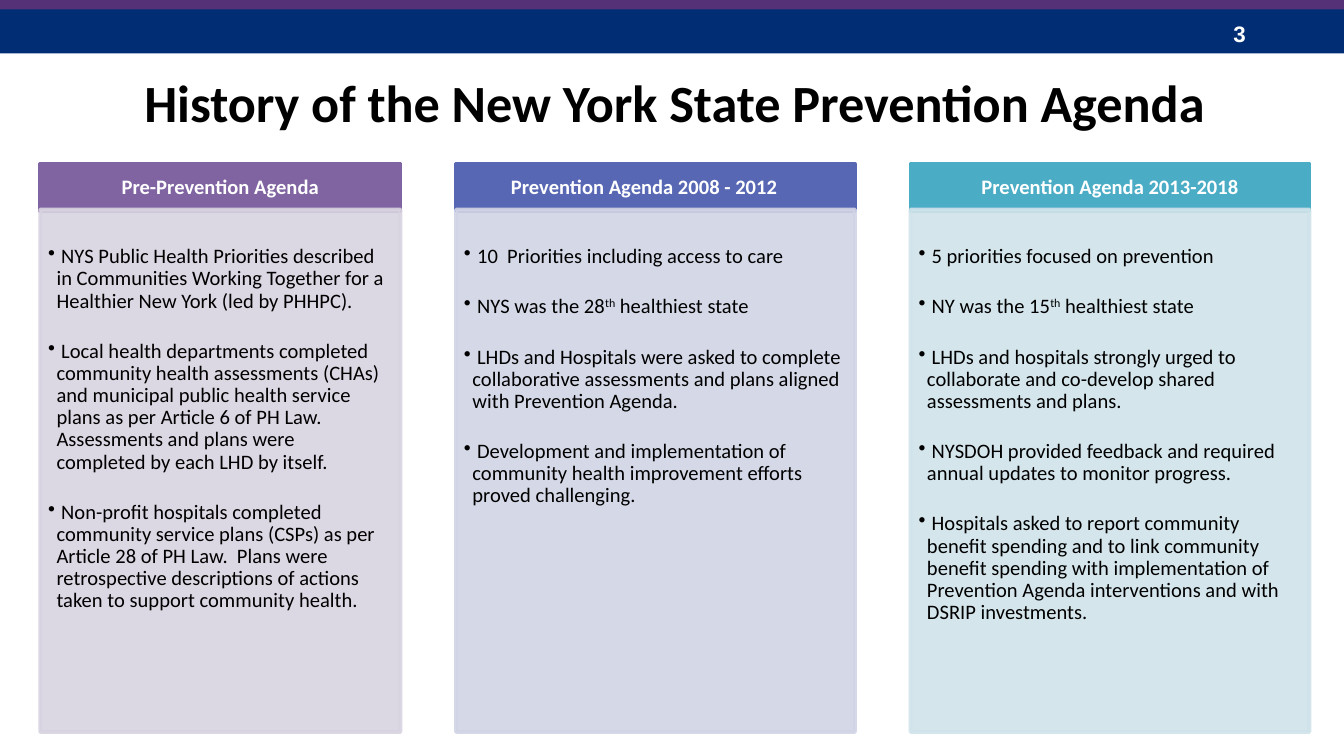
from dataclasses import dataclass

from lxml.etree import SubElement
from pptx import Presentation
from pptx.dml.color import RGBColor as Rgb
from pptx.enum.shapes import MSO_SHAPE as Shape
from pptx.enum.text import MSO_ANCHOR as Anchor, PP_ALIGN as Align
from pptx.oxml.ns import qn
from pptx.util import Cm, Pt


@dataclass(frozen=True)
class Theme:
    band: str = "002D73"
    stripe: str = "553278"
    dark: str = "000000"
    light: str = "FFFFFF"
    font: str = "Calibri"
    number_font: str = "Arial"
    title_size: int = 28
    number_size: int = 12
    text_size: int = 11


THEME = Theme()
TITLE = "History of the New York State Prevention Agenda"
PAGE_NUMBER = "3"

# A tuple holds plain text, superscript, plain text.
ERAS = [
    dict(
        heading="Pre-Prevention Agenda", width=6.81, heading_right=0.23,
        strong="8064A2", pale="D8D3E0",
        points=[
            "NYS Public Health Priorities described in Communities Working Together "
            "for a Healthier New York (led by PHHPC).",
            "Local health departments completed community health assessments (CHAs) "
            "and municipal public health service plans as per Article 6 of PH Law.  "
            "Assessments and plans were completed by each LHD by itself.",
            "Non-profit hospitals completed community service plans (CSPs) as per "
            "Article 28 of PH Law.  Plans were retrospective descriptions of actions "
            "taken to support community health.",
        ],
    ),
    dict(
        heading="Prevention Agenda 2008 - 2012", width=7.54, heading_right=0.66,
        strong="5767B4", pale="D1D4E5",
        points=[
            "10  Priorities including access to care",
            ("NYS was the 28", "th", " healthiest state"),
            "LHDs and Hospitals were asked to complete collaborative assessments and "
            "plans aligned with Prevention Agenda.",
            "Development and implementation of community health improvement efforts "
            "proved challenging.",
        ],
    ),
    dict(
        heading="Prevention Agenda 2013-2018", width=7.54, heading_right=0.23,
        strong="4BACC6", pale="D0E3EA",
        points=[
            "5 priorities focused on prevention",
            ("NY was the 15", "th", " healthiest state"),
            "LHDs and hospitals strongly urged to collaborate and co-develop shared "
            "assessments and plans.",
            "NYSDOH provided feedback and required annual updates to monitor progress.",
            "Hospitals asked to report community benefit spending and to link "
            "community benefit spending with implementation of Prevention Agenda "
            "interventions and with DSRIP investments.",
        ],
    ),
]

COLUMNS_LEFT, COLUMN_GAP = 0.76, 1.05
HEADING_TOP, HEADING_HEIGHT = 3.1, 0.89
BODY_TOP, BODY_HEIGHT = 3.96, 9.88


def set_font(paragraph, size, color, name=THEME.font, bold=False):
    font = paragraph.font
    font.name, font.size, font.bold = name, Pt(size), bold
    font.color.rgb = Rgb.from_string(color)


def set_frame(frame, anchor, left, top, right, bottom):
    frame.word_wrap = True
    frame.vertical_anchor = anchor
    frame.margin_left, frame.margin_top = Cm(left), Cm(top)
    frame.margin_right, frame.margin_bottom = Cm(right), Cm(bottom)


def add_panel(slide, box, color, outlined=True, opacity=100):
    panel = slide.shapes.add_shape(Shape.RECTANGLE, *map(Cm, box))
    panel.shadow.inherit = False
    panel.fill.solid()
    panel.fill.fore_color.rgb = Rgb.from_string(color)
    if outlined:
        panel.line.width = Pt(2)
        panel.line.color.rgb = Rgb.from_string(color)
    else:
        panel.line.fill.background()
    if opacity < 100:
        for swatch in panel._element.spPr.iter(qn("a:srgbClr")):
            SubElement(swatch, qn("a:alpha"), val=str(opacity * 1000))
    return panel


def add_label(slide, box, text, anchor, top_inset, align, **font):
    label = slide.shapes.add_textbox(*map(Cm, box))
    set_frame(label.text_frame, anchor, 0.25, top_inset, 0.25, 0.13)
    paragraph = label.text_frame.paragraphs[0]
    paragraph.text, paragraph.alignment = text, align
    set_font(paragraph, bold=True, **font)


def write_point(paragraph, point):
    """Fill one bulleted paragraph, raising the middle part of a tuple."""
    paragraph.alignment = Align.LEFT
    paragraph.line_spacing = 0.9
    paragraph.space_after = Pt(15)
    properties = paragraph._p.get_or_add_pPr()
    properties.set("marL", str(Cm(0.16)))
    properties.set("indent", str(-Cm(0.16)))
    SubElement(properties, qn("a:buChar"), char="•")
    set_font(paragraph, THEME.text_size, THEME.dark)
    parts = (point,) if isinstance(point, str) else point
    for position, part in enumerate(parts):
        run = paragraph.add_run()
        run.text = part if position else f" {part}"
        if position == 1:
            run._r.get_or_add_rPr().set("baseline", "30000")


def add_era(slide, left, era):
    heading = add_panel(
        slide, (left, HEADING_TOP, era["width"], HEADING_HEIGHT), era["strong"])
    set_frame(heading.text_frame, Anchor.MIDDLE, 0.23, 0.13, era["heading_right"], 0.13)
    paragraph = heading.text_frame.paragraphs[0]
    paragraph.text, paragraph.alignment = era["heading"], Align.CENTER
    paragraph.line_spacing = 0.9
    set_font(paragraph, THEME.text_size, THEME.light, bold=True)

    body = add_panel(
        slide, (left, BODY_TOP, era["width"], BODY_HEIGHT), era["pale"], opacity=90)
    frame = body.text_frame
    set_frame(frame, Anchor.TOP, 0.15, 0.69, 0.23, 0.25)
    for position, point in enumerate(era["points"]):
        write_point(frame.add_paragraph() if position else frame.paragraphs[0], point)


def main():
    deck = Presentation()
    deck.slide_width, deck.slide_height = Cm(25.4), Cm(14.29)
    slide = deck.slides.add_slide(deck.slide_layouts[6])

    add_panel(slide, (0, 0.17, 25.4, 0.84), THEME.band, outlined=False)
    add_panel(slide, (0, -0.05, 25.4, 0.23), THEME.stripe, outlined=False)
    add_label(slide, (23.06, 0.25, 1.9, 0.76), PAGE_NUMBER, Anchor.MIDDLE, 0.13,
              Align.LEFT, size=THEME.number_size, color=THEME.light,
              name=THEME.number_font)
    add_label(slide, (1.24, 1.17, 23.01, 1.68), TITLE, Anchor.TOP, 0.15,
              Align.CENTER, size=THEME.title_size, color=THEME.dark)

    left = COLUMNS_LEFT
    for era in ERAS:
        add_era(slide, left, era)
        left += era["width"] + COLUMN_GAP

    deck.save("out.pptx")


if __name__ == "__main__":
    main()
